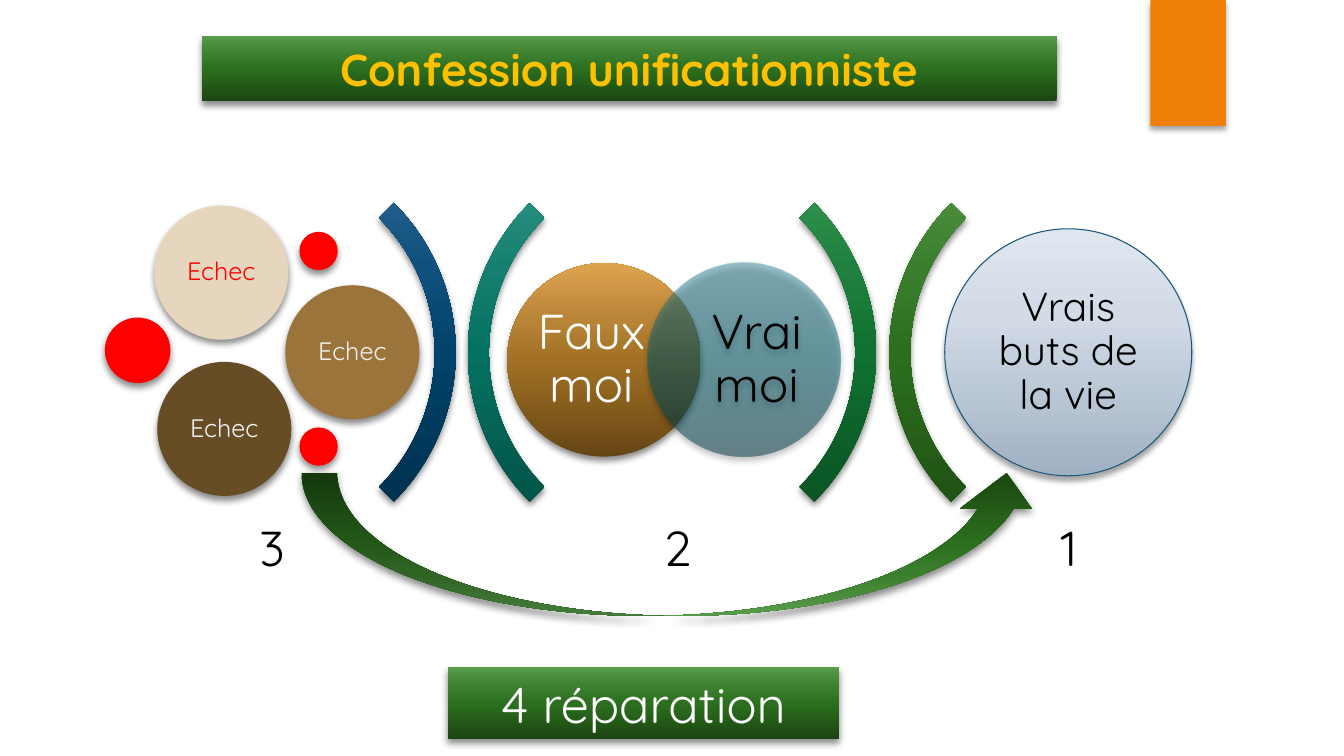
from lxml.etree import SubElement
from pptx import Presentation
from pptx.dml.color import RGBColor
from pptx.enum.shapes import MSO_SHAPE as Preset
from pptx.enum.text import MSO_ANCHOR as Anchor, PP_ALIGN as Align
from pptx.oxml.ns import qn
from pptx.util import Inches, Pt

COLUMNS, ROWS = 13.33, 7.5
FONT = "Quicksand"
BLACK, WHITE, RED, PALE = "000000", "FFFFFF", "FF0000", "F2F2F2"
STOPS = (0, 50, 70, 100)
GREEN = ("1B4611", "2C6F1E", "3B7E2D", "579C4A")
BLUE = ("002A42", "00436B", "0F507C", "346A97")
TEAL = ("01483E", "057161", "167F6F", "389C8A")
EMERALD = ("08481E", "107131", "20803F", "3F9D5A")
AMBER = ("674615", "A27125", "B88436", "DDA350")
LAGOON = ("003B45", "005F70", "126C7E", "358799")
SKY = ("A0B1C4", "D2DBE6", "DEE6EF")
SOFT_SHADOW, DEEP_SHADOW = (35, 4), (45, 5)


def color(value):
    """Turn a hex string into a colour."""
    return RGBColor.from_string(value)


def cells(*counts):
    """Turn counts of one-inch grid cells into lengths."""
    return [Inches(count) for count in counts]


def child(parent, tag, **attributes):
    """Append a drawing element and return it."""
    return SubElement(parent, qn(tag), {key: str(value) for key, value in attributes.items()})


def paint_gradient(shape, colors, stops=STOPS, opacity=100):
    """Fill a shape from its bottom to its top."""
    shape.fill.gradient()
    gradient = shape._element.spPr.find(qn("a:gradFill"))
    for part in list(gradient):
        gradient.remove(part)
    gradient.set("rotWithShape", "0" if shape.rotation else "1")
    stop_list = child(gradient, "a:gsLst")
    for value, stop in zip(colors, stops):
        tone = child(child(stop_list, "a:gs", pos=stop * 1000), "a:srgbClr", val=value)
        if opacity < 100:
            child(tone, "a:alpha", val=opacity * 1000)
    child(gradient, "a:lin", ang=270 * 60000, scaled=0)


def cast_shadow(shape, strength, blur):
    """Give a shape a shadow that falls straight down."""
    shape.shadow.inherit = False
    effects = shape._element.spPr.find(qn("a:effectLst"))
    shadow = child(effects, "a:outerShdw", blurRad=Pt(blur), dist=Pt(3),
                   dir=90 * 60000, algn="ctr", rotWithShape=0)
    child(child(shadow, "a:srgbClr", val=BLACK), "a:alpha", val=strength * 1000)


def add_figure(page, preset, place, fill, stops=STOPS, opacity=100, rotation=0,
               outline=None, shadow=DEEP_SHADOW):
    """Add a preset shape with a plain or graded fill."""
    shape = page.shapes.add_shape(preset, *cells(*place))
    shape.rotation = rotation
    if isinstance(fill, str):
        shape.fill.solid()
        shape.fill.fore_color.rgb = color(fill)
    else:
        paint_gradient(shape, fill, stops, opacity)
    if outline:
        shape.line.color.rgb = color(outline)
        shape.line.width = Pt(0.75)
    else:
        shape.line.fill.background()
    cast_shadow(shape, *shadow)
    return shape


def write(box, text, size, tone, insets=(0.1, 0.05, 0.1, 0.05), spacing=None, bold=False):
    """Write one centred paragraph in a shape or text box."""
    frame = box.text_frame
    frame.word_wrap = True
    frame.vertical_anchor = Anchor.MIDDLE
    (frame.margin_left, frame.margin_top,
     frame.margin_right, frame.margin_bottom) = cells(*insets)
    para = frame.paragraphs[0]
    para.alignment = Align.CENTER
    if spacing:
        para.line_spacing = spacing
    span = para.add_run()
    span.text = text
    span.font.name = FONT
    span.font.size = Pt(size)
    span.font.bold = bold
    span.font.color.rgb = color(tone)


def add_circle(page, left, top, size, fill, **style):
    """Add a circle."""
    return add_figure(page, Preset.OVAL, (left, top, size, size), fill, **style)


def add_bracket(page, left, fill, rotation):
    """Add a quarter ring that bulges right at 90 degrees and left at 270."""
    arc = add_figure(page, Preset.BLOCK_ARC, (left, 1.4, 4.19, 4.19), fill, rotation=rotation)
    for index, value in enumerate((135, 189, 0.05)):
        arc.adjustments[index] = value


def add_step_number(page, left, text):
    """Add a step number under its part of the diagram."""
    box = page.shapes.add_textbox(*cells(left, 5.04, 3.18, 0.84))
    write(box, text, 35, BLACK, (0.15,) * 4, 0.9)


def add_banner(page, place, text, size, tone, bold=False):
    """Add a green bar with a caption."""
    write(add_figure(page, Preset.RECTANGLE, place, GREEN), text, size, tone, bold=bold)


def main():
    """Build the slide and save it."""
    deck = Presentation()
    deck.slide_width, deck.slide_height = cells(COLUMNS, ROWS)
    page = deck.slides.add_slide(deck.slide_layouts[6])

    add_figure(page, Preset.RECTANGLE, (11.41, 0, 0.75, 1.25), "F07F09", shadow=SOFT_SHADOW)

    for left, fill, rotation in ((0.33, BLUE, 90), (4.64, TEAL, 270),
                                 (4.5, EMERALD, 90), (8.82, GREEN, 270)):
        add_bracket(page, left, fill, rotation)
    for left, text in ((1.11, "3"), (5.13, "2"), (9.01, "1")):
        add_step_number(page, left, text)

    false_self = add_circle(page, 5.03, 2.61, 1.92, AMBER)
    write(false_self, "Faux moi", 35, WHITE, (0, 0, 0.25, 0), 0.9)
    true_self = add_circle(page, 6.42, 2.61, 1.92, LAGOON, opacity=50)
    write(true_self, "Vrai moi", 35, BLACK, (0.25, 0, 0, 0), 0.9)

    for left, top, size in ((1.04, 3.15, 0.65), (2.97, 2.3, 0.38), (2.97, 4.24, 0.38)):
        add_circle(page, left, top, size, RED)
    for left, top, fill, tone in ((1.53, 2.04, "E6D6BD", RED), (2.83, 2.83, "9A743A", PALE),
                                  (1.56, 3.59, "674D26", PALE)):
        failure = add_circle(page, left, top, 1.33, fill)
        write(failure, "Echec", 18, tone, (0.07,) * 4, 0.9)

    goals = add_circle(page, 9.37, 2.27, 2.45, SKY, stops=(0, 65, 100),
                       outline="1B587C", shadow=SOFT_SHADOW)
    write(goals, "Vrais buts de la vie", 29, BLACK, (0.12,) * 4, 0.9)

    arrow = add_figure(page, Preset.CURVED_DOWN_ARROW, (2.99, 4.69, 7.35, 1.42), GREEN)
    arrow._element.spPr.find(qn("a:xfrm")).set("flipV", "1")

    add_banner(page, (4.44, 6.62, 3.88, 0.71), "4 réparation", 36, WHITE)
    add_banner(page, (2, 0.36, 8.48, 0.64), "Confession unificationniste", 32, "FFC000", bold=True)

    deck.save("out.pptx")


if __name__ == "__main__":
    main()
